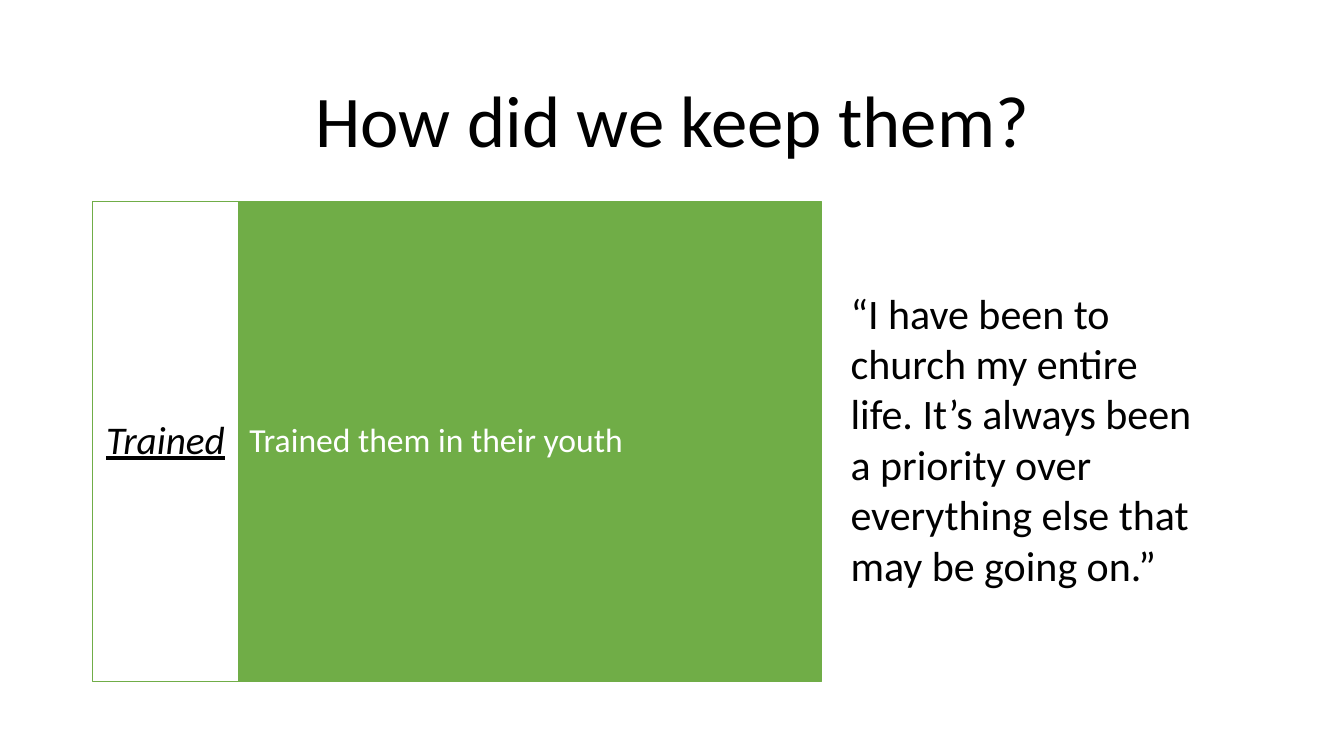
from pptx import Presentation
from pptx.dml.color import RGBColor
from pptx.enum.shapes import MSO_SHAPE as Shape
from pptx.enum.text import MSO_ANCHOR as Anchor, PP_ALIGN as Align
from pptx.util import Pt

BLACK, WHITE, GREEN = "000000", "FFFFFF", "70AD47"
LEFT, PANEL_TOP, PANEL_HEIGHT = 66.2, 144, 342.7
LABEL_WIDTH, ANSWER_WIDTH = 104, 416.6


def color(value):
    return RGBColor.from_string(value)


def write(holder, text, size, ink, align=Align.LEFT, anchor=Anchor.TOP,
          spacing=1.0, side=7.2):
    frame = holder.text_frame
    frame.word_wrap = True
    frame.vertical_anchor = anchor
    frame.margin_left = frame.margin_right = Pt(side)
    frame.text = text
    paragraph = frame.paragraphs[0]
    paragraph.alignment = align
    paragraph.line_spacing = spacing
    font = paragraph.runs[0].font
    font.name = "Calibri"
    font.size = Pt(size)
    font.color.rgb = color(ink)
    return font


def add_text(slide, left, top, width, height, text, size, **style):
    box = slide.shapes.add_textbox(Pt(left), Pt(top), Pt(width), Pt(height))
    return write(box, text, size, BLACK, **style)


def add_panel(slide, left, width, fill, text, size, ink, **style):
    panel = slide.shapes.add_shape(
        Shape.RECTANGLE, Pt(left), Pt(PANEL_TOP), Pt(width), Pt(PANEL_HEIGHT))
    panel.shadow.inherit = False
    panel.fill.solid()
    panel.fill.fore_color.rgb = color(fill)
    panel.line.color.rgb = color(GREEN)
    panel.line.width = Pt(1)
    return write(panel, text, size, ink, anchor=Anchor.MIDDLE, spacing=0.9, **style)


def main():
    deck = Presentation()
    deck.slide_width, deck.slide_height = Pt(960), Pt(540)
    slide = deck.slides.add_slide(deck.slide_layouts[6])

    add_text(slide, LEFT, 44, 828, 89.3, "How did we keep them?", 52,
             align=Align.CENTER, anchor=Anchor.MIDDLE, spacing=0.9)
    add_panel(slide, LEFT + LABEL_WIDTH, ANSWER_WIDTH, GREEN,
              "Trained them in their youth", 24, WHITE, side=8)
    label_font = add_panel(slide, LEFT, LABEL_WIDTH, WHITE, "Trained", 28, BLACK,
                           align=Align.CENTER, side=5.8)
    label_font.italic = True
    label_font.underline = True
    add_text(slide, 600.5, 201.6, 268.6, 225.4,
             "“I have been to church my entire life. It’s always been a priority "
             "over everything else that may be going on.”", 30)

    deck.save("out.pptx")


if __name__ == "__main__":
    main()
